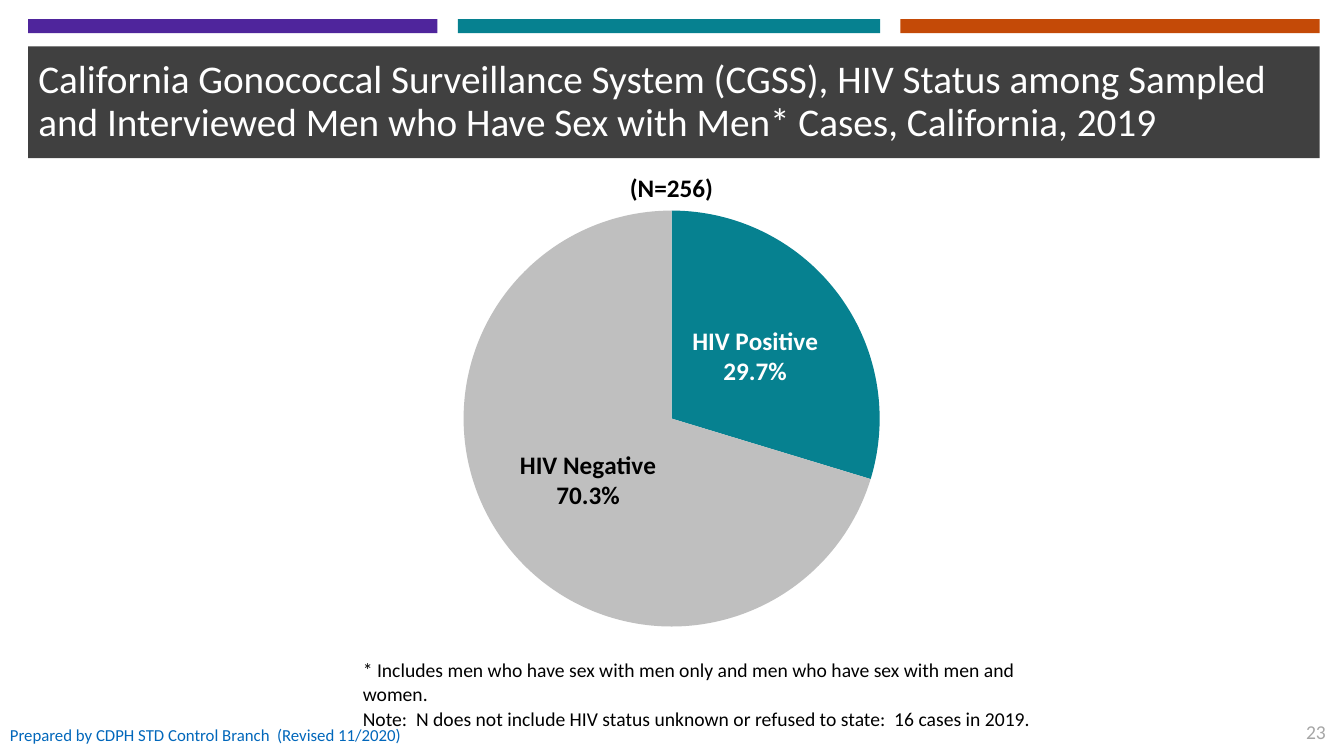
from copy import deepcopy

from pptx import Presentation
from pptx.chart.data import CategoryChartData
from pptx.dml.color import RGBColor
from pptx.enum.chart import XL_CHART_TYPE, XL_LABEL_POSITION
from pptx.enum.shapes import MSO_SHAPE
from pptx.enum.text import MSO_ANCHOR, PP_ALIGN
from pptx.oxml import parse_xml
from pptx.oxml.ns import nsdecls
from pptx.util import Inches, Pt

PIE = XL_CHART_TYPE.PIE
LABEL_CENTER = XL_LABEL_POSITION.CENTER
RECTANGLE = MSO_SHAPE.RECTANGLE
TOP, MIDDLE = MSO_ANCHOR.TOP, MSO_ANCHOR.MIDDLE
LEFT, CENTER, RIGHT = PP_ALIGN.LEFT, PP_ALIGN.CENTER, PP_ALIGN.RIGHT

FONT = "Calibri"
COLORS = {
    "purple": "4F259C",
    "teal": "068190",
    "orange": "C44A07",
    "charcoal": "404040",
    "silver": "BFBFBF",
    "gray": "A6A6A6",
    "blue": "0167BB",
    "black": "000000",
    "white": "FFFFFF",
}
MARGIN = 0.28
GAP = 0.2
BAR_TOP, BAR_HEIGHT = 0.19, 0.14
BARS = [("purple", 4.06), ("teal", 4.19), ("orange", 4.16)]
FOOTER_TOP, FOOTER_HEIGHT = 7.09, 0.4
PLOT_AREA = {"x": 0.175, "y": 0.007, "w": 0.649, "h": 0.978}
HIV_STATUS = [
    ("HIV Positive", 29.7, "teal", "white"),
    ("HIV Negative", 70.3, "silver", "black"),
]


def rgb(name):
    return RGBColor.from_string(COLORS[name])


def box(*lengths):
    return [Inches(length) for length in lengths]


def set_fill(element, color):
    element.fill.solid()
    element.fill.fore_color.rgb = rgb(color)


def style_font(font, size, color, bold=False):
    font.name = FONT
    font.size = Pt(size)
    font.bold = bold
    font.color.rgb = rgb(color)


def add_bars(slide):
    left = MARGIN
    for color, width in BARS:
        bar = slide.shapes.add_shape(RECTANGLE, *box(left, BAR_TOP, width, BAR_HEIGHT))
        bar.shadow.inherit = False
        set_fill(bar, color)
        bar.line.fill.background()
        left += width + GAP


def set_title(slide, text):
    title = slide.shapes.title
    title.left, title.top, title.width, title.height = box(MARGIN, 0.46, 12.81, 1.11)
    set_fill(title, "charcoal")
    title.text_frame.text = text
    title.text_frame.vertical_anchor = MIDDLE
    paragraph = title.text_frame.paragraphs[0]
    paragraph.alignment = LEFT
    paragraph.line_spacing = 0.9
    style_font(paragraph.font, 28, "white")


def add_text(slide, bounds, lines, size, color, bold=False, align=LEFT,
             anchor=TOP, wrap=True, space_after=0):
    frame = slide.shapes.add_textbox(*box(*bounds)).text_frame
    frame.word_wrap = wrap
    frame.vertical_anchor = anchor
    frame.text = "\n".join(lines)
    for paragraph in frame.paragraphs:
        paragraph.alignment = align
        paragraph.space_after = Pt(space_after)
        style_font(paragraph.font, size, color, bold)


def show_category_and_percent(labels):
    flags = {"showVal": "0", "showCatName": "1", "showPercent": "1"}
    for name, value in flags.items():
        labels.xpath(f"c:{name}")[0].set("val", value)
    separator = parse_xml(f"<c:separator {nsdecls('c')}>\n</c:separator>")
    labels.xpath("c:showBubbleSize")[0].addnext(separator)


def set_plot_area(chart):
    plot_area = chart.plots[0]._element.getparent()
    for layout in plot_area.xpath("c:layout"):
        plot_area.remove(layout)
    lengths = "".join(f'<c:{name} val="{share}"/>' for name, share in PLOT_AREA.items())
    plot_area.insert(0, parse_xml(
        f'<c:layout {nsdecls("c")}><c:manualLayout><c:layoutTarget val="inner"/>'
        f'<c:xMode val="edge"/><c:yMode val="edge"/>{lengths}'
        '</c:manualLayout></c:layout>'))


def add_status_pie(slide):
    data = CategoryChartData()
    data.categories = [status[0] for status in HIV_STATUS]
    data.add_series("Series 1", [status[1] for status in HIV_STATUS])
    chart = slide.shapes.add_chart(PIE, *box(3.47, 2.06, 6.39, 4.22), data).chart
    chart.has_title = False
    chart.has_legend = False
    style_font(chart.font, 18, "black", bold=True)
    set_plot_area(chart)
    chart.plots[0].vary_by_categories = True
    series = chart.plots[0].series[0]

    labels = series.data_labels
    labels.number_format = "0.0%"
    labels.number_format_is_linked = False
    labels.position = LABEL_CENTER
    style_font(labels.font, 18, "white", bold=True)
    group = labels._element
    for index, (_, _, fill, text_color) in enumerate(HIV_STATUS):
        point = series.points[index]
        set_fill(point.format, fill)
        point.format.line.fill.background()
        style_font(point.data_label.font, 18, text_color, bold=True)
        point.data_label.position = LABEL_CENTER
    number_format = group.xpath("c:numFmt")[0]
    for label in group.xpath("c:dLbl"):
        label.insert(1, deepcopy(number_format))
        show_category_and_percent(label)
    show_category_and_percent(group)


def main():
    presentation = Presentation()
    presentation.slide_width, presentation.slide_height = box(13.33, 7.5)
    slide = presentation.slides.add_slide(presentation.slide_layouts[5])
    add_bars(slide)
    set_title(slide, "California Gonococcal Surveillance System (CGSS), HIV Status among "
                     "Sampled and Interviewed Men who Have Sex with Men* Cases, "
                     "California, 2019")
    add_text(slide, (6.14, 1.66, 1.04, 0.41), ["(N=256)"], 18, "black",
             bold=True, align=CENTER, wrap=False)
    add_status_pie(slide)
    add_text(slide, (3.5, 6.48, 7.12, 0.59), [
        "* Includes men who have sex with men only and men who have sex with men and women.",
        "Note:  N does not include HIV status unknown or refused to state:  16 cases in 2019.",
    ], 14, "black", space_after=1)
    for left, width, text in [(0, 2.8, "Prepared by CDPH STD Control Branch"),
                              (2.65, 1.5, "(Revised 11/2020)")]:
        add_text(slide, (left, FOOTER_TOP, width, FOOTER_HEIGHT), [text], 12, "blue",
                 anchor=MIDDLE)
    add_text(slide, (12.82, FOOTER_TOP, 0.43, 0.34), ["23"], 14, "gray",
             align=RIGHT, wrap=False)
    presentation.save("out.pptx")


if __name__ == "__main__":
    main()
